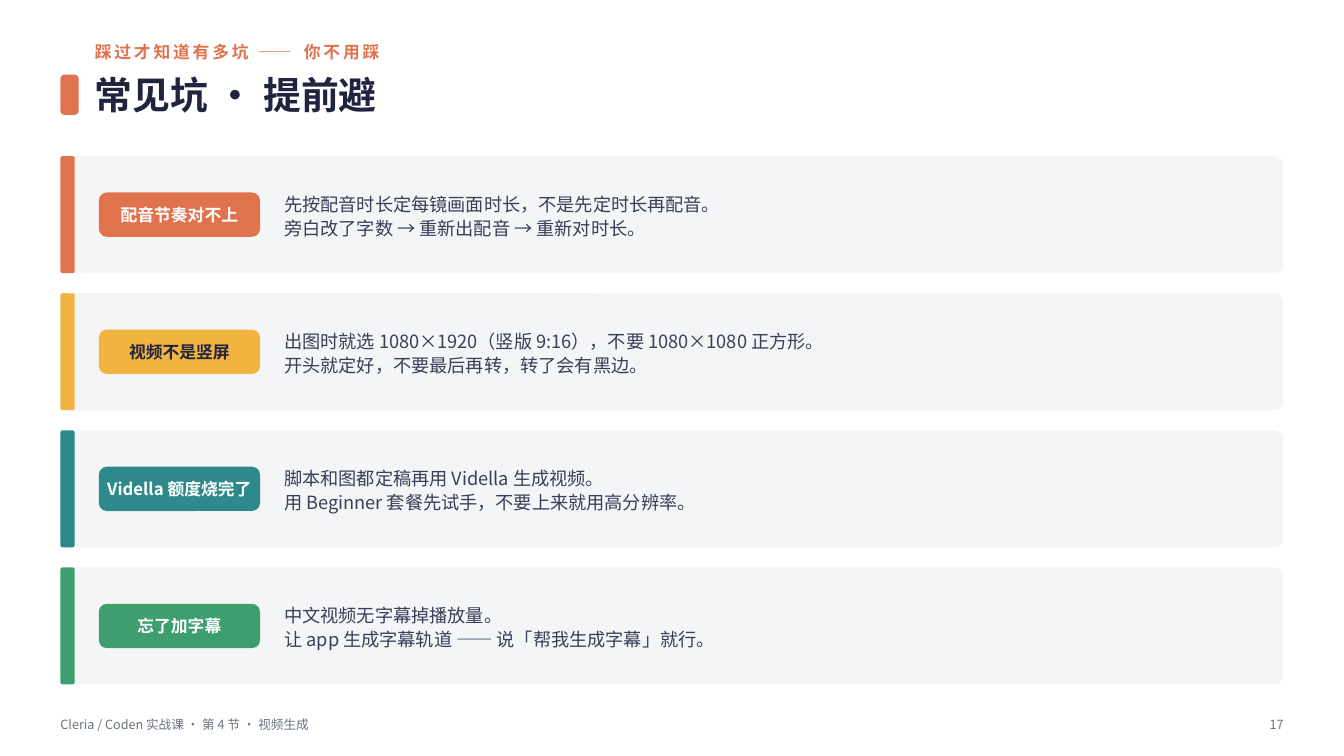
"""Build the slide on common pitfalls in making videos."""
from lxml import etree
from pptx import Presentation
from pptx.dml.color import RGBColor
from pptx.enum import shapes, text
from pptx.oxml.ns import qn
from pptx.util import Inches, Pt

FONT = "Noto Sans CJK SC"
WHITE = RGBColor(0xFF, 0xFF, 0xFF)
CORAL = RGBColor(0xE0, 0x73, 0x4D)
AMBER = RGBColor(0xF2, 0xB4, 0x41)
TEAL = RGBColor(0x2E, 0x8A, 0x8A)
GREEN = RGBColor(0x3E, 0x9E, 0x6E)
NAVY = RGBColor(0x20, 0x24, 0x3F)
BODY = RGBColor(0x3A, 0x3E, 0x57)
GRAY = RGBColor(0x6B, 0x72, 0x80)
CARD = RGBColor(0xF4, 0xF5, 0xF7)

KICKER = "踩过才知道有多坑 —— 你不用踩"
TITLE = "常见坑 · 提前避"
FOOTER = "Cleria / Coden 实战课 · 第 4 节 · 视频生成"
PAGE_NUMBER = "17"
PITFALLS = [
    ("配音节奏对不上", CORAL, WHITE,
     ["先按配音时长定每镜画面时长，不是先定时长再配音。",
      "旁白改了字数 → 重新出配音 → 重新对时长。"]),
    ("视频不是竖屏", AMBER, NAVY,
     ["出图时就选 1080×1920（竖版 9:16），不要 1080×1080 正方形。",
      "开头就定好，不要最后再转，转了会有黑边。"]),
    ("Vidella 额度烧完了", TEAL, WHITE,
     ["脚本和图都定稿再用 Vidella 生成视频。",
      "用 Beginner 套餐先试手，不要上来就用高分辨率。"]),
    ("忘了加字幕", GREEN, WHITE,
     ["中文视频无字幕掉播放量。",
      "让 app 生成字幕轨道 —— 说「帮我生成字幕」就行。"]),
]

LEFT, WIDTH = 0.6, 12.13
HEAD_LEFT, HEAD_WIDTH = 0.94, 11.79
CARD_TOP, CARD_HEIGHT, CARD_GAP = 1.55, 1.16, 0.2
PILL_HEIGHT = 0.44
FOOTER_TOP = 7.04


def write(box, lines, size, color, bold=False, align=text.PP_ALIGN.LEFT,
          line_spacing=None, tracking=None, wrap=True):
    frame = box.text_frame
    frame.word_wrap = wrap
    frame.vertical_anchor = text.MSO_ANCHOR.MIDDLE
    frame.margin_left = frame.margin_right = 0
    frame.margin_top = frame.margin_bottom = 0
    for index, line in enumerate(lines):
        para = frame.add_paragraph() if index else frame.paragraphs[0]
        para.text = line
        para.alignment = align
        if line_spacing:
            para.line_spacing = line_spacing
        para.font.size = Pt(size)
        para.font.bold = bold
        para.font.color.rgb = color
        para.font.name = FONT
        defaults = para._p.pPr.find(qn("a:defRPr"))
        etree.SubElement(defaults, qn("a:ea")).set("typeface", FONT)
        if tracking:
            defaults.set("spc", str(tracking * 100))


def add_text(page, left, top, width, height, lines, size, color, **style):
    box = page.shapes.add_textbox(
        Inches(left), Inches(top), Inches(width), Inches(height))
    write(box, lines, size, color, **style)


def add_block(page, left, top, width, height, radius, color):
    block = page.shapes.add_shape(
        shapes.MSO_SHAPE.ROUNDED_RECTANGLE,
        Inches(left), Inches(top), Inches(width), Inches(height))
    block.adjustments[0] = radius / min(width, height)
    block.fill.solid()
    block.fill.fore_color.rgb = color
    block.line.fill.background()
    block.shadow.inherit = False
    return block


def add_pitfall(page, top, label, color, label_color, advice):
    add_block(page, LEFT, top, WIDTH, CARD_HEIGHT, 0.09, CARD)
    add_block(page, LEFT, top, 0.14, CARD_HEIGHT, 0.02, color)
    pill_top = top + (CARD_HEIGHT - PILL_HEIGHT) / 2
    pill = add_block(page, 0.98, pill_top, 1.6, PILL_HEIGHT, 0.08, color)
    write(pill, [label], 12, label_color, bold=True,
          align=text.PP_ALIGN.CENTER, wrap=False)
    add_text(page, 2.82, top, 9.58, CARD_HEIGHT, advice, 13, BODY,
             line_spacing=1.1)


def main():
    deck = Presentation()
    deck.slide_width, deck.slide_height = Inches(13.33), Inches(7.5)
    page = deck.slides.add_slide(deck.slide_layouts[6])

    add_text(page, HEAD_LEFT, 0.36, HEAD_WIDTH, 0.3, [KICKER], 12, CORAL,
             bold=True, tracking=2)
    add_block(page, LEFT, 0.74, 0.18, 0.4, 0.04, CORAL)
    add_text(page, HEAD_LEFT, 0.64, HEAD_WIDTH, 0.6, [TITLE], 27, NAVY,
             bold=True)
    for index, pitfall in enumerate(PITFALLS):
        add_pitfall(page, CARD_TOP + index * (CARD_HEIGHT + CARD_GAP),
                    *pitfall)
    add_text(page, LEFT, FOOTER_TOP, 9, 0.3, [FOOTER], 9, GRAY)
    add_text(page, LEFT + WIDTH - 0.7, FOOTER_TOP, 0.7, 0.3, [PAGE_NUMBER],
             9, GRAY, align=text.PP_ALIGN.RIGHT)
    deck.save("out.pptx")


if __name__ == "__main__":
    main()
